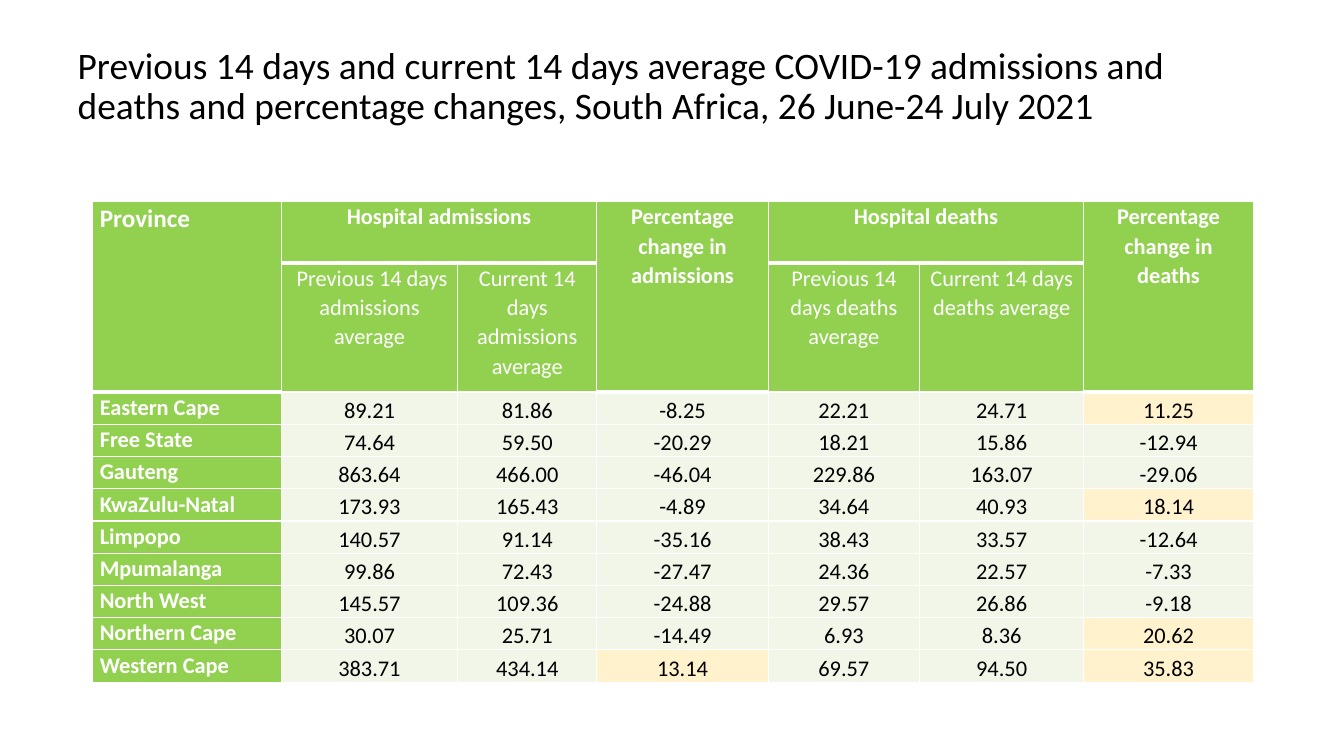
"""Build a slide with a table of provincial COVID-19 admissions and deaths."""
import pptx
import pptx.dml.color
import pptx.enum.text
import pptx.oxml
import pptx.oxml.ns
import pptx.util
from pptx.util import Inches

TITLE = ("Previous 14 days and current 14 days average COVID-19 admissions and deaths "
         "and percentage changes, South Africa, 26 June-24 July 2021")
HEADS = [
    ("Province", "Hospital admissions", "", "Percentage change in admissions",
     "Hospital deaths", "", "Percentage change in deaths"),
    ("", " Previous 14 days admissions average", "Current 14 days admissions average", "",
     "Previous 14 days deaths average", "Current 14 days deaths average", ""),
]
DATA = [
    ("Eastern Cape", 89.21, 81.86, -8.25, 22.21, 24.71, 11.25),
    ("Free State", 74.64, 59.50, -20.29, 18.21, 15.86, -12.94),
    ("Gauteng", 863.64, 466.00, -46.04, 229.86, 163.07, -29.06),
    ("KwaZulu-Natal", 173.93, 165.43, -4.89, 34.64, 40.93, 18.14),
    ("Limpopo", 140.57, 91.14, -35.16, 38.43, 33.57, -12.64),
    ("Mpumalanga", 99.86, 72.43, -27.47, 24.36, 22.57, -7.33),
    ("North West", 145.57, 109.36, -24.88, 29.57, 26.86, -9.18),
    ("Northern Cape", 30.07, 25.71, -14.49, 6.93, 8.36, 20.62),
    ("Western Cape", 383.71, 434.14, 13.14, 69.57, 94.50, 35.83),
]
WIDTHS = [1.87, 1.75, 1.38, 1.7, 1.5, 1.63, 1.68]
HEIGHTS = [0.61, 1.28] + [0.32] * len(DATA)
TALL = (0, 3, 6)
WIDE = (1, 4)
CHANGE = (3, 6)
COLORS = {"head": "92D050", "body": "F1F6E8", "rise": "FFF2CC",
          "white": "FFFFFF", "black": "000000"}
ALIGN = pptx.enum.text.PP_ALIGN
ANCHOR = pptx.enum.text.MSO_ANCHOR


def color(name):
    """Return the named colour."""
    return pptx.dml.color.RGBColor.from_string(COLORS[name])


def write(frame, text, size=16, ink="white", bold=False, align=ALIGN.CENTER, space=1.07):
    """Put formatted text in a frame."""
    para = frame.paragraphs[0]
    para.alignment, para.line_spacing = align, space
    run = para.add_run()
    run.text = text
    font = run.font
    font.name, font.size, font.bold = "Calibri", pptx.util.Pt(size), bold
    font.color.rgb = color(ink)


def paint(cell, fill, base=1):
    """Fill a cell and give it white borders, the bottom one base points wide."""
    cell.fill.solid()
    cell.fill.fore_color.rgb = color(fill)
    props = cell._tc.get_or_add_tcPr()
    for spot, (side, width) in enumerate(zip("LRTB", (1, 1, 1, base))):
        props.insert(spot, pptx.oxml.parse_xml(
            f'<a:ln{side} {pptx.oxml.ns.nsdecls("a")} w="{pptx.util.Pt(width)}"><a:solidFill>'
            f'<a:srgbClr val="{COLORS["white"]}"/></a:solidFill></a:ln{side}>'))


def inset(cell, side, top):
    """Set the cell margins."""
    cell.margin_left = cell.margin_right = Inches(side)
    cell.margin_top, cell.margin_bottom = Inches(top), 0


def main():
    """Make the slide and save it."""
    deck = pptx.Presentation()
    deck.slide_width, deck.slide_height = Inches(13.33), Inches(7.5)
    slide = deck.slides.add_slide(deck.slide_layouts[5])
    title = slide.shapes.title
    title.left, title.top, title.width, title.height = map(Inches, (0.67, 0.3, 12, 1.13))
    frame = title.text_frame
    frame.word_wrap, frame.vertical_anchor = True, ANCHOR.MIDDLE
    frame.auto_size = pptx.enum.text.MSO_AUTO_SIZE.NONE
    write(frame, TITLE, size=26.7, ink="black", align=ALIGN.LEFT, space=0.9)

    table = slide.shapes.add_table(
        len(HEIGHTS), len(WIDTHS), Inches(0.92), Inches(2),
        Inches(sum(WIDTHS)), Inches(sum(HEIGHTS))).table
    table.horz_banding = False
    for column, width in zip(table.columns, WIDTHS):
        column.width = Inches(width)
    for row, height in zip(table.rows, HEIGHTS):
        row.height = Inches(height)
    for col in TALL:
        table.cell(0, col).merge(table.cell(1, col))
    for col in WIDE:
        table.cell(0, col).merge(table.cell(0, col + 1))

    for row, heads in enumerate(HEADS):
        for col, text in enumerate(heads):
            cell = table.cell(row, col)
            paint(cell, "head", base=3 if row == 0 or col in TALL else 1)
            inset(cell, 0.07, 0)
            if text:
                write(cell.text_frame, text, size=16 if col else 18, bold=row == 0,
                      align=ALIGN.CENTER if col else ALIGN.LEFT)

    for row, (name, *values) in enumerate(DATA, len(HEADS)):
        cell = table.cell(row, 0)
        paint(cell, "head")
        inset(cell, 0.07, 0)
        write(cell.text_frame, name, bold=True, align=ALIGN.LEFT)
        for col, value in enumerate(values, 1):
            cell = table.cell(row, col)
            paint(cell, "rise" if col in CHANGE and value > 0 else "body")
            inset(cell, 0.01, 0.01)
            cell.vertical_anchor = ANCHOR.BOTTOM
            write(cell.text_frame, f"{value:.2f}", ink="black", space=1.0)
    deck.save("out.pptx")


if __name__ == "__main__":
    main()
